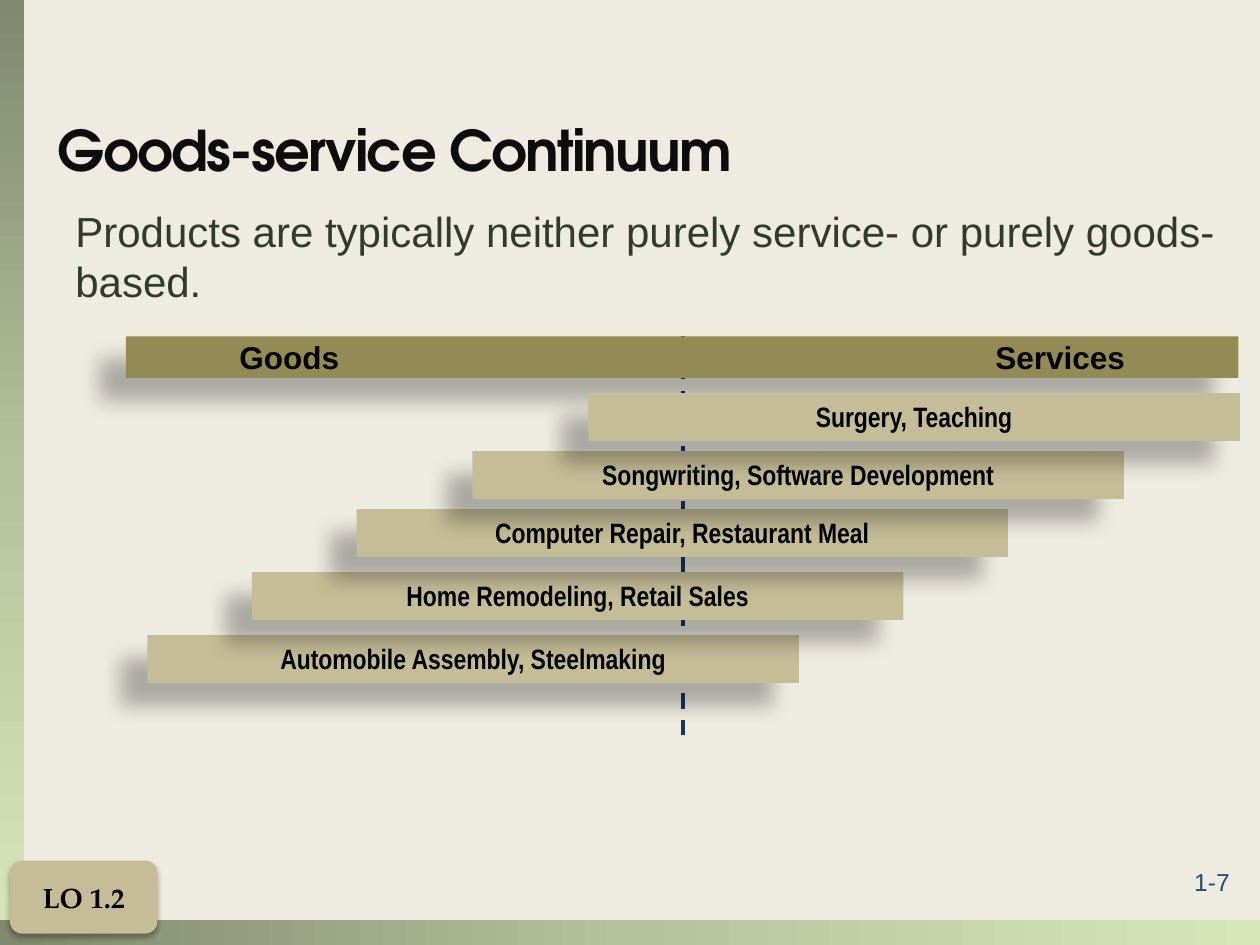
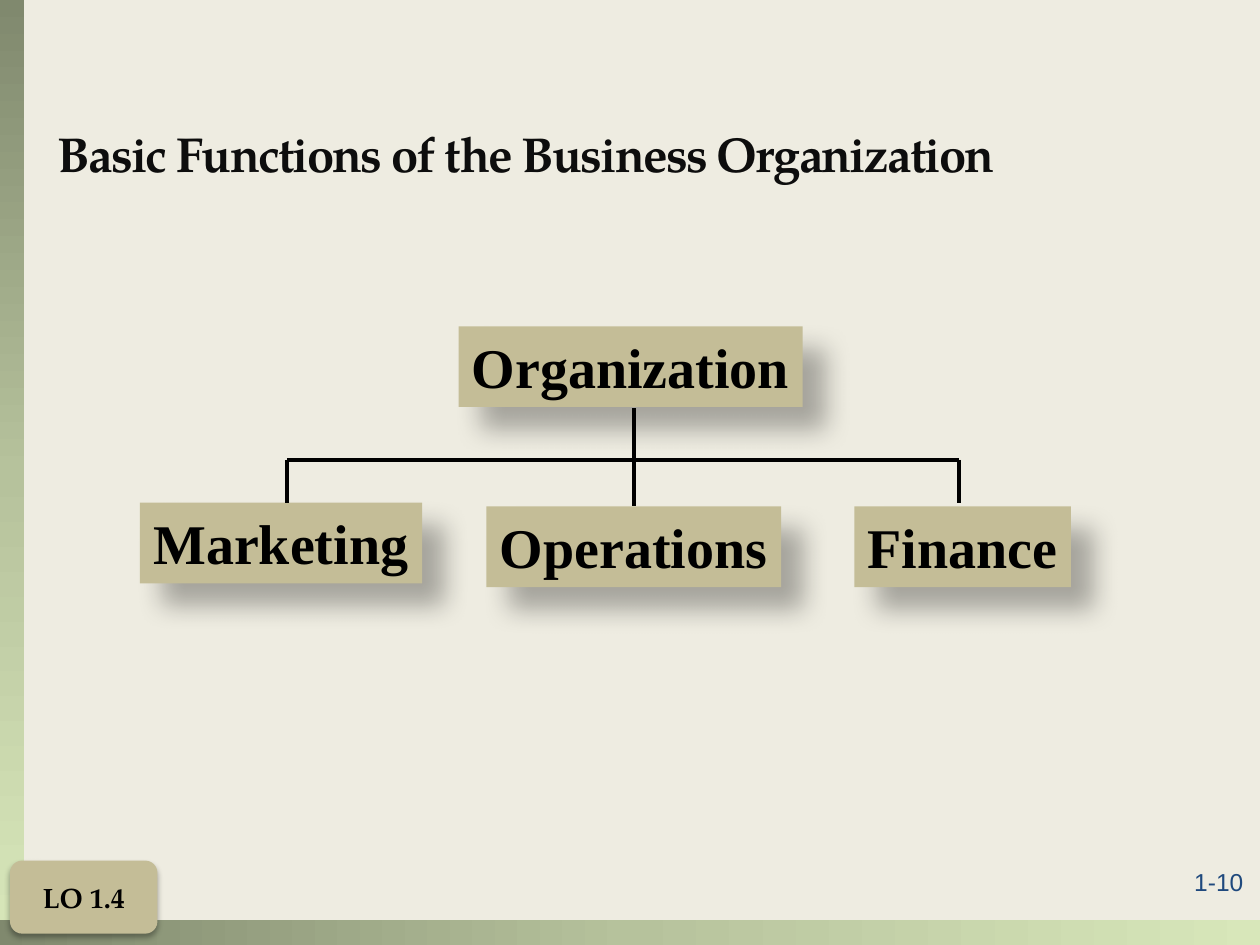
import copy
from dataclasses import dataclass
from typing import Optional

import pptx
import pptx.dml.color
import pptx.enum.dml
import pptx.enum.shapes
import pptx.enum.text
import pptx.oxml.ns
import pptx.oxml.xmlchemy
import pptx.util
from lxml import etree

Inches = pptx.util.Inches
RGBColor = pptx.dml.color.RGBColor
Anchor = pptx.enum.text.MSO_ANCHOR
Align = pptx.enum.text.PP_ALIGN
Preset = pptx.enum.shapes.MSO_SHAPE
qn = pptx.oxml.ns.qn

# Colours
CREAM = RGBColor(0xEE, 0xEC, 0xE1)
TAN = RGBColor(0xC4, 0xBD, 0x97)
OLIVE = RGBColor(0x94, 0x8A, 0x54)
BLACK = RGBColor(0, 0, 0)
TITLE_INK = RGBColor(0x0D, 0x0D, 0x0D)
BODY_GREEN = RGBColor(0x30, 0x3B, 0x2C)
NUMBER_BLUE = RGBColor(0x1F, 0x49, 0x7D)
DASH_BLUE = RGBColor(0x17, 0x37, 0x5E)
BAND_COLOURS = (
    RGBColor(0x80, 0x89, 0x6E),
    RGBColor(0xB6, 0xC2, 0x9C),
    RGBColor(0xD8, 0xE7, 0xBA),
)


@dataclass(frozen=True)
class Area:
    left: float
    top: float
    width: float
    height: float

    def lengths(self) -> list:
        return [Inches(value) for value in (self.left, self.top, self.width, self.height)]


@dataclass(frozen=True)
class TextStyle:
    font: str
    size: float
    colour: RGBColor = BLACK
    bold: bool = True
    align: Align = Align.CENTER
    anchor: Anchor = Anchor.TOP
    wrap: bool = True
    spacing: float = 0


@dataclass(frozen=True)
class Shadow:
    opacity: int
    blur: float
    distance: float
    angle: int


@dataclass(frozen=True)
class Label:
    text: str
    area: Area


# Text styles and shadows
BAR_STYLE = TextStyle("Arial Narrow", 16)
HEADER_STYLE = TextStyle("Arial", 18, anchor=Anchor.MIDDLE, wrap=False)
BODY_STYLE = TextStyle("Arial", 24, BODY_GREEN, bold=False, align=Align.LEFT)
NUMBER_STYLE = TextStyle("Arial", 14, NUMBER_BLUE, bold=False, align=Align.LEFT)
BADGE_STYLE = TextStyle("TeX Gyre Pagella", 16, anchor=Anchor.MIDDLE)
UNIT_STYLE = TextStyle("Times New Roman", 32, wrap=False)
BAR_SHADOW = Shadow(28, 11.8, 19.7, 141)
BADGE_SHADOW = Shadow(32, 3.5, 2.2, 90)
UNIT_SHADOW = Shadow(30, 15, 18, 45)

# Continuum bars, from the goods end to the services end
BAR_WIDTH, BAR_HEIGHT = 5.17, 0.38
BARS = [
    Label(text, Area(left, top, BAR_WIDTH, BAR_HEIGHT))
    for text, left, top in (
        ("Automobile Assembly, Steelmaking", 1.17, 5.04),
        ("Home Remodeling, Retail Sales", 2, 4.54),
        ("Computer Repair, Restaurant Meal", 2.83, 4.04),
        ("Songwriting, Software Development", 3.75, 3.58),
        ("Surgery, Teaching", 4.67, 3.12),
    )
]

# Organization chart
ORGANIZATION = Label("Organization", Area(3.64, 2.59, 2.73, 0.64))
OPERATIONS = Label("Operations", Area(3.86, 4.02, 2.34, 0.64))
FINANCE = Label("Finance", Area(6.78, 4.02, 1.72, 0.64))
MARKETING = Label("Marketing", Area(1.11, 3.99, 2.24, 0.64))
BRANCH_LEFT, BRANCH_RIGHT, BRANCH_Y, UNIT_TOP = 2.28, 7.61, 3.65, 3.99
TRUNK_X = 5.03


def write_text(shape, text: str, style: TextStyle) -> None:
    frame = shape.text_frame
    frame.text = text
    frame.word_wrap = style.wrap
    frame.vertical_anchor = style.anchor
    para = frame.paragraphs[0]
    para.alignment = style.align
    for span in para.runs:
        span.font.name = style.font
        span.font.size = pptx.util.Pt(style.size)
        span.font.bold = style.bold
        span.font.color.rgb = style.colour
        if style.spacing:
            span.font._element.set("spc", str(round(style.spacing * 100)))


def add_text(page, text: str, area: Area, style: TextStyle):
    box = page.shapes.add_textbox(*area.lengths())
    write_text(box, text, style)
    return box


def add_shadow(shape, shadow: Shadow) -> None:
    effects = shape._element.spPr.find(qn("a:effectLst"))
    outer = etree.SubElement(
        effects,
        qn("a:outerShdw"),
        blurRad=str(pptx.util.Pt(shadow.blur)),
        dist=str(pptx.util.Pt(shadow.distance)),
        dir=str(shadow.angle * 60000),
        algn="ctr",
        rotWithShape="0",
    )
    colour = etree.SubElement(outer, qn("a:srgbClr"), val=str(BLACK))
    etree.SubElement(colour, qn("a:alpha"), val=str(shadow.opacity * 1000))


def add_block(page, area: Area, fill: Optional[RGBColor] = None, preset=Preset.RECTANGLE):
    block = page.shapes.add_shape(preset, *area.lengths())
    block.shadow.inherit = False
    block.line.fill.background()
    if fill is not None:
        block.fill.solid()
        block.fill.fore_color.rgb = fill
    return block


def add_label(page, label: Label, style: TextStyle, shadow: Shadow,
              fill: RGBColor = TAN, preset=Preset.RECTANGLE):
    block = add_block(page, label.area, fill, preset)
    add_shadow(block, shadow)
    write_text(block, label.text, style)
    return block


def add_line(page, start: tuple, end: tuple, colour: RGBColor, weight: float):
    line = page.shapes.add_connector(
        pptx.enum.shapes.MSO_CONNECTOR.STRAIGHT,
        *(Inches(value) for value in (*start, *end)),
    )
    line.line.color.rgb = colour
    line.line.width = pptx.util.Pt(weight)
    etree.SubElement(line._element.spPr, qn("a:effectLst"))
    return line


def add_band(page, area: Area, angle: float) -> None:
    band = add_block(page, area)
    band.fill.gradient()
    band.fill.gradient_angle = angle
    stop_list = band._element.spPr.find(".//" + qn("a:gsLst"))
    stop_list.insert(1, copy.deepcopy(stop_list[0]))
    for index, (stop, colour) in enumerate(zip(band.fill.gradient_stops, BAND_COLOURS)):
        stop.color.rgb = colour
        stop.position = index / 2


def add_page(deck, number: str):
    """Add a page with the bands and the page number."""
    page = deck.slides.add_slide(deck.slide_layouts[6])
    page.background.fill.solid()
    page.background.fill.fore_color.rgb = CREAM
    add_band(page, Area(0, 0, 0.19, 7.5), 270)
    add_band(page, Area(0, 7.3, 10, 0.2), 0)
    add_text(page, number, Area(9.38, 6.83, 0.67, 0.34), NUMBER_STYLE)
    return page


def add_title_and_badge(page, title: str, font: str, size: float, objective: str) -> None:
    style = TextStyle(font, size, TITLE_INK, align=Align.LEFT, anchor=Anchor.BOTTOM, spacing=-1)
    add_text(page, title, Area(0.36, 0.17, 9, 1.33), style)
    badge = Label(objective, Area(0.08, 6.83, 1.17, 0.58))
    add_label(page, badge, BADGE_STYLE, BADGE_SHADOW, preset=Preset.ROUNDED_RECTANGLE)


def build_continuum(deck) -> None:
    page = add_page(deck, "1-7")
    divider = add_line(page, (5.42, 2.67), (5.42, 5.83), DASH_BLUE, 2.25)
    divider.line.dash_style = pptx.enum.dml.MSO_LINE.DASH
    add_text(
        page,
        "Products are typically neither purely service- or purely goods-based.",
        Area(0.5, 1.58, 9.33, 0.9),
        BODY_STYLE,
    )

    # Scale header: one tab stop separates its two ends
    scale = Label("Goods\tServices", Area(1, 2.67, 8.83, 0.33))
    header = add_label(page, scale, HEADER_STYLE, BAR_SHADOW, OLIVE)
    properties = header.text_frame.paragraphs[0]._p.get_or_add_pPr()
    tabs = etree.SubElement(properties, qn("a:tabLst"))
    etree.SubElement(tabs, qn("a:tab"), pos=str(Inches(6)), algn="l")

    for bar in BARS:
        add_label(page, bar, BAR_STYLE, BAR_SHADOW)
    add_title_and_badge(page, "Goods-service Continuum", "TeX Gyre Adventor", 32, "LO 1.2")


def build_organization(deck) -> None:
    page = add_page(deck, "1-10")
    operations = add_label(page, OPERATIONS, UNIT_STYLE, UNIT_SHADOW)
    for unit in (FINANCE, MARKETING, ORGANIZATION):
        add_label(page, unit, UNIT_STYLE, UNIT_SHADOW)

    # Trunk, crossbar and the two outer branches
    trunk = add_line(page, (TRUNK_X, 3.24), (TRUNK_X, UNIT_TOP), BLACK, 2.5)
    trunk.end_connect(operations, 0)
    add_line(page, (BRANCH_LEFT, BRANCH_Y), (BRANCH_RIGHT, BRANCH_Y), BLACK, 2.5)
    for branch_x in (BRANCH_LEFT, BRANCH_RIGHT):
        add_line(page, (branch_x, BRANCH_Y), (branch_x, UNIT_TOP), BLACK, 2.5)
    add_title_and_badge(
        page, "Basic Functions of the Business Organization", "TeX Gyre Pagella", 28, "LO 1.4"
    )


def main() -> None:
    deck = pptx.Presentation()
    deck.slide_width = Inches(10)
    deck.slide_height = Inches(7.5)
    build_continuum(deck)
    build_organization(deck)
    deck.save("out.pptx")


if __name__ == "__main__":
    main()
